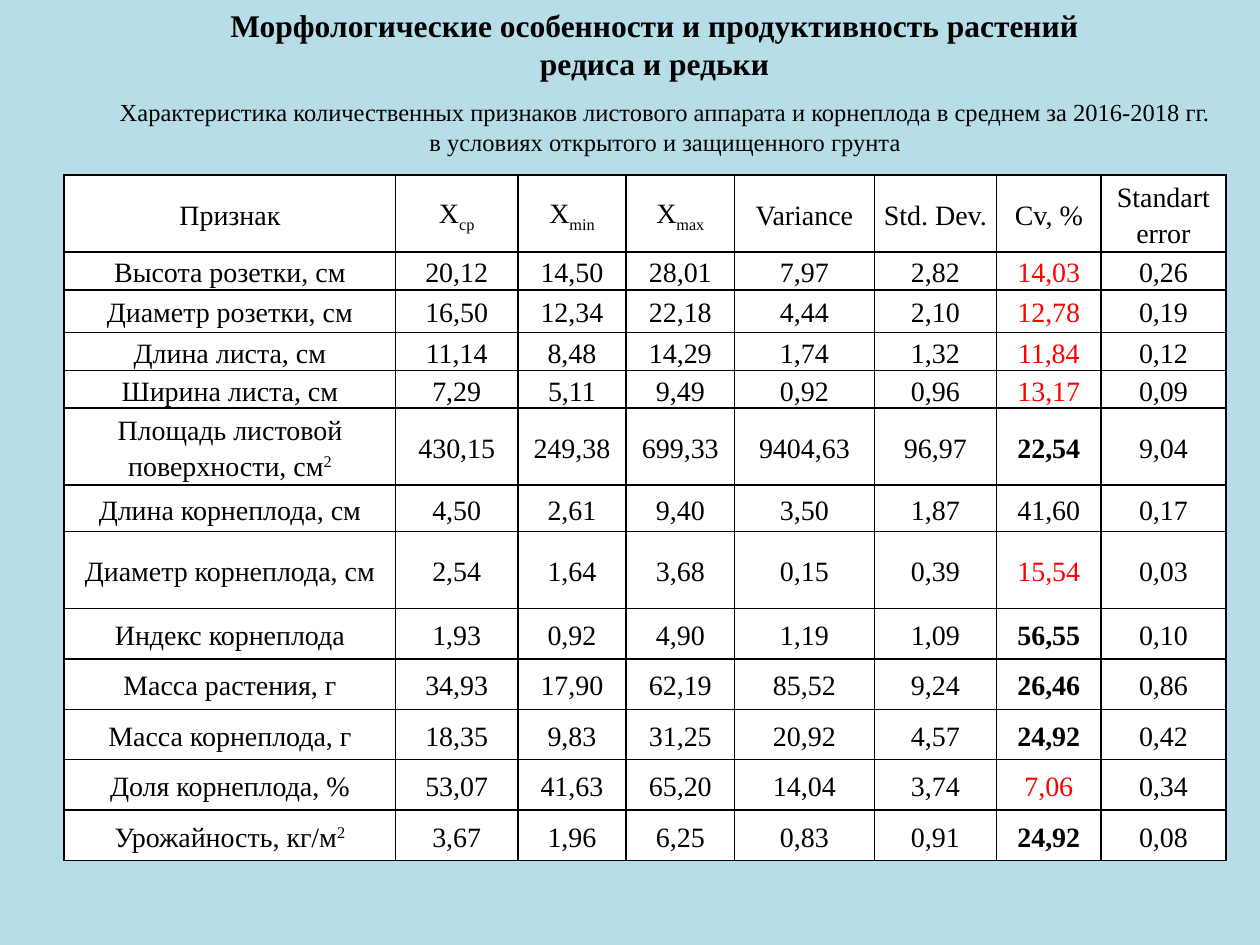
import pptx
import pptx.dml.color
import pptx.enum.text
import pptx.oxml
import pptx.oxml.ns
import pptx.util
from pptx.util import Inches

RGBColor = pptx.dml.color.RGBColor
BACKGROUND = RGBColor(0xB7, 0xDE, 0xE8)
WHITE = RGBColor(0xFF, 0xFF, 0xFF)
BLACK = RGBColor(0, 0, 0)
RED = RGBColor(0xFF, 0, 0)
FONT = "Times New Roman"

TITLE = "Морфологические особенности и продуктивность растений редиса и редьки"
SUBTITLE = (
    "Характеристика количественных признаков листового аппарата и корнеплода "
    "в среднем за 2016-2018 гг. в условиях открытого и защищенного грунта"
)

# "_" starts a subscript, "^" a superscript
HEADER = ["Признак", "X_ср", "X_min", "X_max", "Variance", "Std. Dev.", "Cv, %", "Standart error"]
TRAITS = [
    ("Высота розетки, см", "20,12 14,50 28,01 7,97 2,82 14,03 0,26"),
    ("Диаметр розетки, см", "16,50 12,34 22,18 4,44 2,10 12,78 0,19"),
    ("Длина листа, см", "11,14 8,48 14,29 1,74 1,32 11,84 0,12"),
    ("Ширина листа, см", "7,29 5,11 9,49 0,92 0,96 13,17 0,09"),
    ("Площадь листовой поверхности, см^2", "430,15 249,38 699,33 9404,63 96,97 22,54 9,04"),
    ("Длина корнеплода, см", "4,50 2,61 9,40 3,50 1,87 41,60 0,17"),
    ("Диаметр корнеплода, см", "2,54 1,64 3,68 0,15 0,39 15,54 0,03"),
    ("Индекс корнеплода", "1,93 0,92 4,90 1,19 1,09 56,55 0,10"),
    ("Масса растения, г", "34,93 17,90 62,19 85,52 9,24 26,46 0,86"),
    ("Масса корнеплода, г", "18,35 9,83 31,25 20,92 4,57 24,92 0,42"),
    ("Доля корнеплода, %", "53,07 41,63 65,20 14,04 3,74 7,06 0,34"),
    ("Урожайность, кг/м^2", "3,67 1,96 6,25 0,83 0,91 24,92 0,08"),
]
COL_WIDTHS = [2.63, 0.97, 0.86, 0.86, 1.11, 0.97, 0.83, 0.99]
ROW_HEIGHTS = [0.61, 0.3, 0.34, 0.3, 0.3, 0.61, 0.37, 0.61] + [0.4] * 5
CV_COL = 6
CV_LIMIT = 20  # lower variation is red, higher is bold
PLAIN_CV = "41,60"


def format_paragraph(p, size, color=BLACK, bold=False):
    p.alignment = pptx.enum.text.PP_ALIGN.CENTER
    p.font.name = FONT
    p.font.size = pptx.util.Pt(size)
    p.font.bold = bold
    p.font.color.rgb = color


def fill_text(sp, box, text, size, anchor, bold=False):
    sp.left, sp.top, sp.width, sp.height = (Inches(v) for v in box)
    tf = sp.text_frame
    tf.word_wrap = True
    tf.auto_size = pptx.enum.text.MSO_AUTO_SIZE.NONE
    tf.vertical_anchor = anchor
    tf.text = text
    format_paragraph(tf.paragraphs[0], size, bold=bold)


def add_marked_runs(p, text):
    for mark, baseline in (("_", "-25000"), ("^", "30000")):
        base, found, script = text.partition(mark)
        if found:
            p.add_run().text = base
            r = p.add_run()
            r.text = script
            r.font._element.set("baseline", baseline)
            return
    p.add_run().text = text


def set_borders(cell):
    tc_pr = cell._tc.get_or_add_tcPr()
    for i, side in enumerate(("lnL", "lnR", "lnT", "lnB")):
        tc_pr.insert(i, pptx.oxml.parse_xml(
            f'<a:{side} {pptx.oxml.ns.nsdecls("a")} w="12700"><a:solidFill>'
            f'<a:srgbClr val="{BLACK}"/></a:solidFill></a:{side}>'))


def fill_cell(cell, text, color, bold):
    cell.fill.solid()
    cell.fill.fore_color.rgb = WHITE
    set_borders(cell)
    cell.vertical_anchor = pptx.enum.text.MSO_ANCHOR.MIDDLE
    cell.margin_left = cell.margin_right = Inches(0.07)
    cell.margin_top = cell.margin_bottom = 0
    p = cell.text_frame.paragraphs[0]
    format_paragraph(p, 16, color, bold)
    p.line_spacing = 1.15
    add_marked_runs(p, text)


def cv_style(text):
    if float(text.replace(",", ".")) < CV_LIMIT:
        return RED, False
    return BLACK, text != PLAIN_CV


def add_traits_table(s):
    rows = [HEADER] + [[name] + values.split() for name, values in TRAITS]
    table = s.shapes.add_table(
        len(rows), len(HEADER), Inches(0.51), Inches(1.39),
        Inches(sum(COL_WIDTHS)), Inches(sum(ROW_HEIGHTS))).table
    for col, width in zip(table.columns, COL_WIDTHS):
        col.width = Inches(width)
    for row, height in zip(table.rows, ROW_HEIGHTS):
        row.height = Inches(height)
    for i, row in enumerate(rows):
        for j, text in enumerate(row):
            color, bold = cv_style(text) if i and j == CV_COL else (BLACK, False)
            fill_cell(table.cell(i, j), text, color, bold)


def main():
    prs = pptx.Presentation()
    prs.slide_width, prs.slide_height = Inches(10), Inches(7.5)
    s = prs.slides.add_slide(prs.slide_layouts[5])
    s.background.fill.solid()
    s.background.fill.fore_color.rgb = BACKGROUND

    # Title, table and subtitle
    anchors = pptx.enum.text.MSO_ANCHOR
    fill_text(s.shapes.title, (1.61, 0, 7.17, 0.71), TITLE, 18, anchors.TOP, bold=True)
    add_traits_table(s)
    subtitle = s.shapes.add_textbox(0, 0, 0, 0)
    fill_text(subtitle, (0.83, 0.72, 8.9, 0.57), SUBTITLE, 14, anchors.MIDDLE)

    prs.save("out.pptx")


if __name__ == "__main__":
    main()
